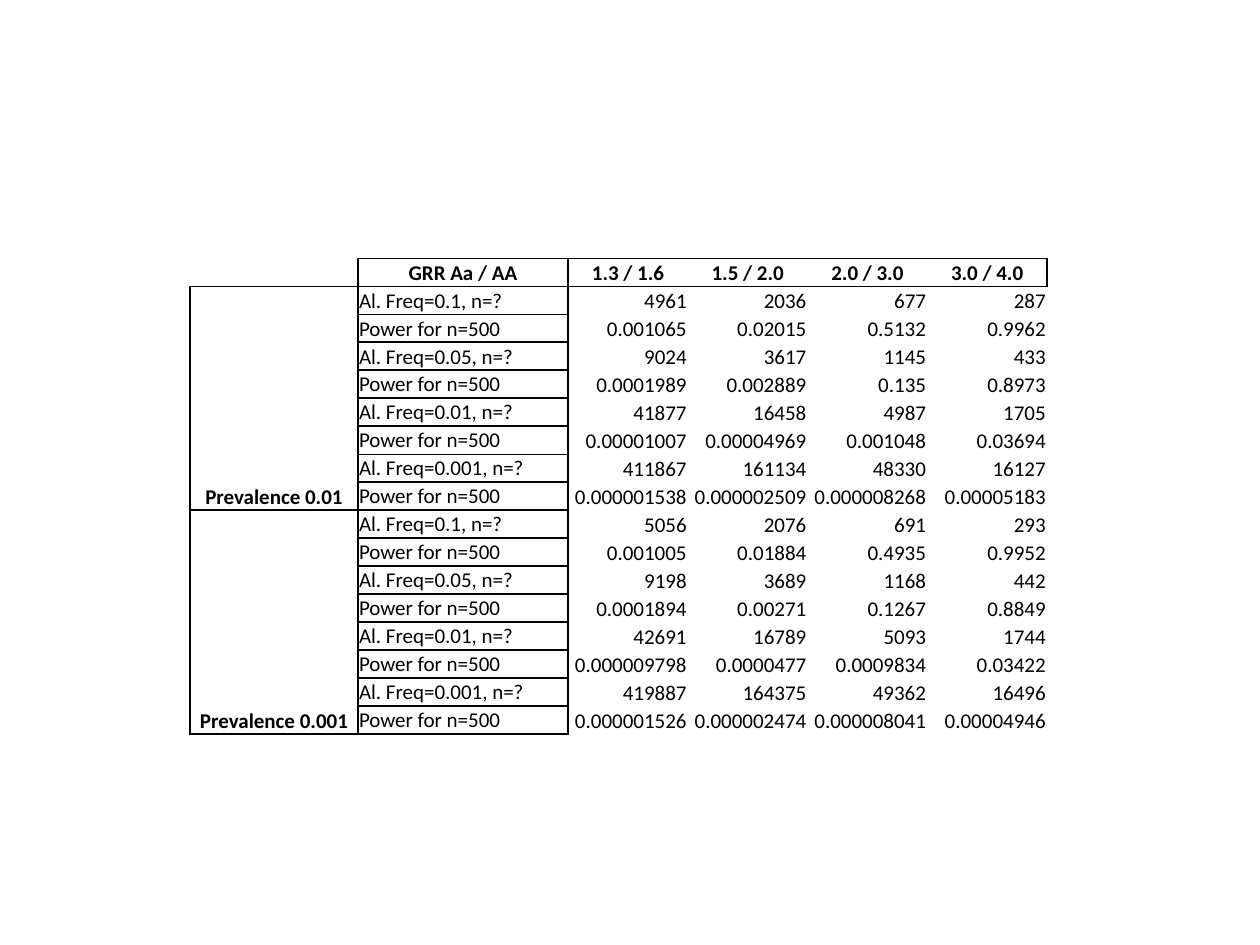
"""Build a slide with a table of sample sizes and power by relative risk."""
from lxml import etree
from pptx import Presentation
from pptx.dml.color import RGBColor
from pptx.enum.text import MSO_ANCHOR, PP_ALIGN
from pptx.oxml.ns import qn
from pptx.util import Inches, Pt

LEFT, MID, RIGHT = PP_ALIGN.LEFT, PP_ALIGN.CENTER, PP_ALIGN.RIGHT
CENTRE, BASE = MSO_ANCHOR.MIDDLE, MSO_ANCHOR.BOTTOM

THEME = {"font": "Calibri", "size": 12, "ink": "000000", "line": 1, "thin": 0.5}
PLAIN = "{2D5ABB26-0587-4C30-8999-92F81FD0307C}"
WIDTHS = [1.33, 1.67] + [0.95] * 4

HEAD = ["", "GRR Aa / AA", "1.3 / 1.6", "1.5 / 2.0", "2.0 / 3.0", "3.0 / 4.0"]
FREQS = ["0.1", "0.05", "0.01", "0.001"]
GROUPS = [
    ("Prevalence 0.01", [
        ["4961", "2036", "677", "287"],
        ["0.001065", "0.02015", "0.5132", "0.9962"],
        ["9024", "3617", "1145", "433"],
        ["0.0001989", "0.002889", "0.135", "0.8973"],
        ["41877", "16458", "4987", "1705"],
        ["0.00001007", "0.00004969", "0.001048", "0.03694"],
        ["411867", "161134", "48330", "16127"],
        ["0.000001538", "0.000002509", "0.000008268", "0.00005183"],
    ]),
    ("Prevalence 0.001", [
        ["5056", "2076", "691", "293"],
        ["0.001005", "0.01884", "0.4935", "0.9952"],
        ["9198", "3689", "1168", "442"],
        ["0.0001894", "0.00271", "0.1267", "0.8849"],
        ["42691", "16789", "5093", "1744"],
        ["0.000009798", "0.0000477", "0.0009834", "0.03422"],
        ["419887", "164375", "49362", "16496"],
        ["0.000001526", "0.000002474", "0.000008041", "0.00004946"],
    ]),
]
SPAN = 2 * len(FREQS)
THIN = {(6, 1, "B"), (7, 1, "T")}


def get_rows():
    labels = [text for freq in FREQS
              for text in (f"Al. Freq={freq}, n=?", "Power for n=500")]
    rows = [HEAD]
    for name, data in GROUPS:
        for i, (label, vals) in enumerate(zip(labels, data)):
            rows.append([name if i == 0 else "", label] + vals)
    return rows


def get_sides(row, col):
    if row == 0:
        ends = {0: "RB", 1: "LRTB", 2: "LTB", len(HEAD) - 1: "RTB"}
        return ends.get(col, "TB")
    if col == 0:
        return {1: "LRTB", 0: "LRB"}.get(row % SPAN, "LR")
    if col == 1:
        return "LRTB"
    return ("L" if col == 2 else "") + ("T" if row == 1 else "")


def get_style(row, col):
    if row == 0:
        return MID, CENTRE, True
    return [(MID, BASE, True), (LEFT, CENTRE, False)][col] if col < 2 else (RIGHT, BASE, False)


def set_lines(cell, row, col):
    props = cell._tc.get_or_add_tcPr()
    drawn = get_sides(row, col)
    for side in "LRTB":
        line = etree.SubElement(props, qn(f"a:ln{side}"))
        if side not in drawn:
            etree.SubElement(line, qn("a:noFill"))
            continue
        width = THEME["thin" if (row, col, side) in THIN else "line"]
        line.set("w", str(Pt(width)))
        fill = etree.SubElement(line, qn("a:solidFill"))
        etree.SubElement(fill, qn("a:srgbClr"), val=THEME["ink"])


def set_cell(cell, text, row, col):
    align, anchor, bold = get_style(row, col)
    cell.margin_left = cell.margin_right = cell.margin_top = Inches(0.01)
    cell.margin_bottom = 0
    cell.vertical_anchor = anchor
    para = cell.text_frame.paragraphs[0]
    para.alignment = align
    font = para.font
    font.name, font.size, font.bold = THEME["font"], Pt(THEME["size"]), bold
    font.color.rgb = RGBColor.from_string(THEME["ink"])
    if text:
        para.text = text
    else:
        para._p.get_or_add_endParaRPr().set("sz", str(THEME["size"] * 100))
    set_lines(cell, row, col)
    cell.fill.background()


def main():
    deck = Presentation()
    deck.slide_width, deck.slide_height = Inches(10), Inches(7.5)
    slide = deck.slides.add_slide(deck.slide_layouts[6])
    rows = get_rows()
    frame = slide.shapes.add_table(
        len(rows), len(HEAD), Inches(1.51), Inches(2.05), Inches(6.81), Inches(3.78))
    table = frame.table
    table.first_row = table.horz_banding = False
    table._tbl.tblPr.find(qn("a:tableStyleId")).text = PLAIN
    for column, width in zip(table.columns, WIDTHS):
        column.width = Inches(width)
    for r, row in enumerate(rows):
        for c, text in enumerate(row):
            set_cell(table.cell(r, c), text, r, c)
    for top in range(1, len(rows), SPAN):
        table.cell(top, 0).merge(table.cell(top + SPAN - 1, 0))
    deck.save("out.pptx")


if __name__ == "__main__":
    main()
